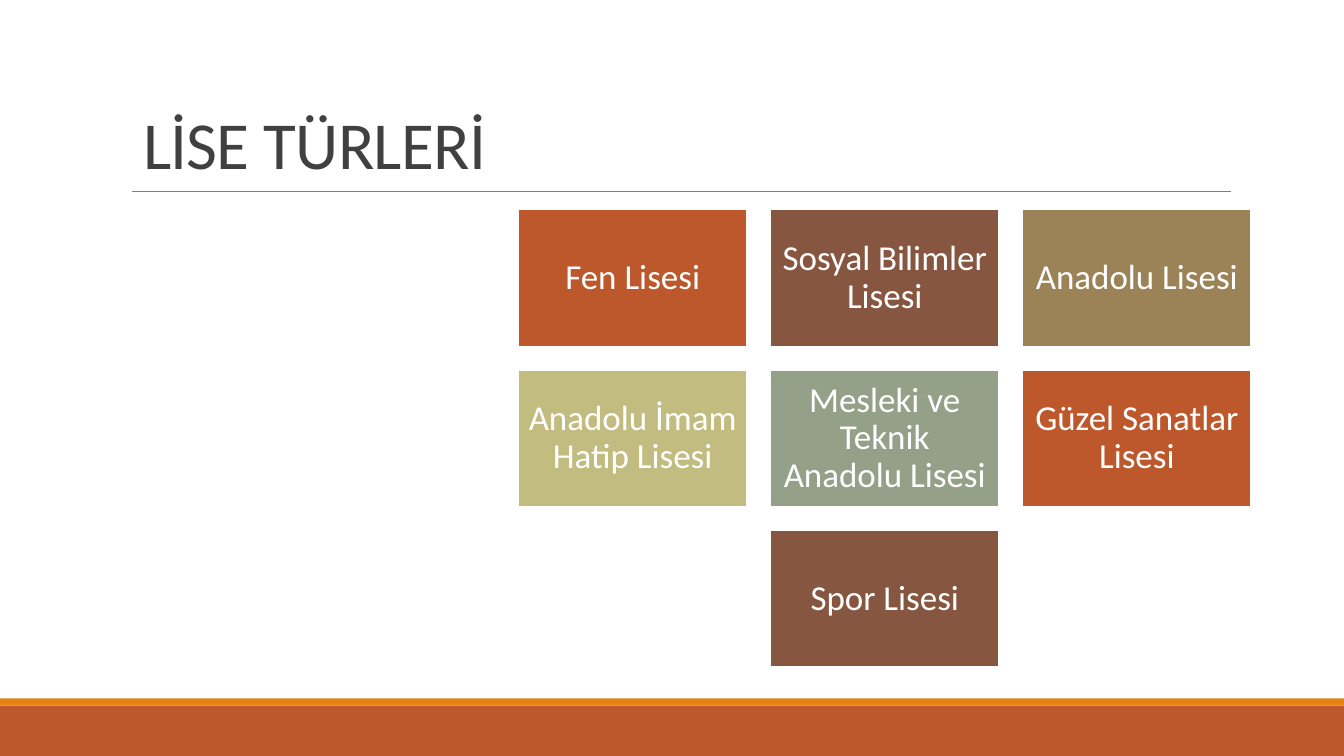
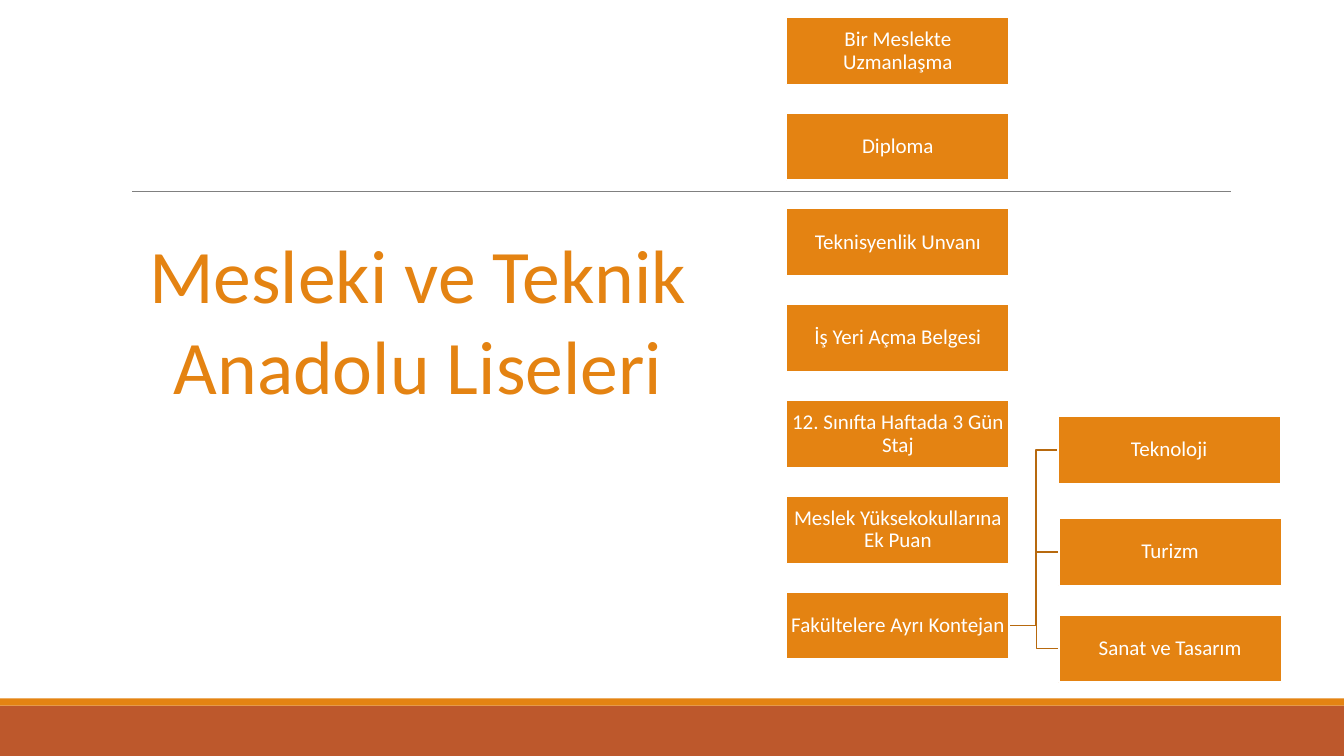
import pptx
import pptx.util
import pptx.dml.color
import pptx.enum.shapes
import pptx.enum.text
import lxml.etree

WIDTH, HEIGHT = 13.33, 7.5
FONT = "Calibri"
RUST, ORANGE, WHITE = "BD582C", "E48312", "FFFFFF"
TITLE_GREY, RULE_GREY, BRANCH_BROWN = "404040", "808080", "B7690E"
SCHOOL_COLOURS = [RUST, "865640", "9B8357", "C2BC80", "94A088"]
ANCHOR = pptx.enum.text.MSO_ANCHOR
ALIGN = pptx.enum.text.PP_ALIGN

SCHOOLS_TITLE = "LİSE TÜRLERİ"
SCHOOLS = [
    "Fen Lisesi", "Sosyal Bilimler Lisesi", "Anadolu Lisesi",
    "Anadolu İmam Hatip Lisesi", "Mesleki ve Teknik Anadolu Lisesi",
    "Güzel Sanatlar Lisesi", "Spor Lisesi",
]
SCHOOL_GRID = dict(left=5.14, top=2.08, columns=3, pitch_x=2.5, pitch_y=1.59)
SCHOOL_SIZE = (2.27, 1.36)

VOCATIONAL_TITLE = "Mesleki ve Teknik Anadolu Liseleri"
BENEFITS = [
    "Bir Meslekte Uzmanlaşma", "Diploma", "Teknisyenlik Unvanı",
    "İş Yeri Açma Belgesi", "12. Sınıfta Haftada 3 Gün Staj",
    "Meslek Yüksekokullarına Ek Puan", "Fakültelere Ayrı Kontejan",
]
FACULTIES = [
    ("Teknoloji", 10.49, 4.13),
    ("Turizm", 10.5, 5.14),
    ("Sanat ve Tasarım", 10.5, 6.1),
]
BENEFIT_LEFT, BENEFIT_TOP, BENEFIT_PITCH = 7.8, 0.17, 0.95
BENEFIT_SIZE = (2.21, 0.67)
ELBOW_SHARE = 0.55


def inches(*values):
    return [pptx.util.Inches(value) for value in values]


def colour(code):
    return pptx.dml.color.RGBColor.from_string(code)


def write(frame, text, size, ink=WHITE, align=ALIGN.CENTER, anchor=ANCHOR.MIDDLE,
          spacing=1.0, inset=None, tracking=0):
    frame.word_wrap = True
    frame.vertical_anchor = anchor
    if inset is not None:
        margin = pptx.util.Inches(inset)
        frame.margin_left = frame.margin_right = margin
        frame.margin_top = frame.margin_bottom = margin
    paragraph = frame.paragraphs[0]
    paragraph.alignment = align
    paragraph.line_spacing = spacing
    run = paragraph.add_run()
    run.text = text
    run.font.name = FONT
    run.font.size = pptx.util.Pt(size)
    run.font.color.rgb = colour(ink)
    if tracking:
        run._r.get_or_add_rPr().set("spc", str(int(tracking * 100)))


def add_box(slide, left, top, width, height, fill, outline=None):
    box = slide.shapes.add_shape(pptx.enum.shapes.MSO_SHAPE.RECTANGLE,
                                 *inches(left, top, width, height))
    box.shadow.inherit = False
    box.fill.solid()
    box.fill.fore_color.rgb = colour(fill)
    if outline:
        box.line.color.rgb = colour(outline)
        box.line.width = pptx.util.Pt(1.25)
    else:
        box.line.fill.background()
    return box


def add_label(slide, text, left, top, extent, fill, size, inset):
    box = add_box(slide, left, top, *extent, fill, outline=WHITE)
    write(box.text_frame, text, size=size, spacing=0.9, inset=inset)


def add_heading(slide, text, left, top, width, height, **style):
    heading = slide.shapes.add_textbox(*inches(left, top, width, height))
    write(heading.text_frame, text, **style)


def add_branch(slide, start, end):
    elbow = start[0] + ELBOW_SHARE * (end[0] - start[0])
    corners = [start, (elbow, start[1]), (elbow, end[1]), end]
    points = [tuple(inches(*corner)) for corner in corners]
    builder = slide.shapes.build_freeform(*points[0], scale=1.0)
    builder.add_line_segments(points[1:], close=False)
    branch = builder.convert_to_shape()
    branch.shadow.inherit = False
    branch.fill.background()
    branch.line.color.rgb = colour(BRANCH_BROWN)
    branch.line.width = pptx.util.Pt(1.25)


def new_slide(deck):
    slide = deck.slides.add_slide(deck.slide_layouts[6])
    add_box(slide, 0, 7, WIDTH, 0.5, RUST)
    add_box(slide, 0, 6.93, WIDTH, 0.07, ORANGE)
    rule = slide.shapes.add_connector(pptx.enum.shapes.MSO_CONNECTOR.STRAIGHT,
                                      *inches(1.31, 1.9, 12.21, 1.9))
    rule.line.color.rgb = colour(RULE_GREY)
    rule.line.width = pptx.util.Pt(0.5)
    lxml.etree.SubElement(rule._element.spPr, pptx.oxml.ns.qn("a:effectLst"))
    return slide


def build_schools(deck):
    slide = new_slide(deck)
    add_heading(slide, SCHOOLS_TITLE, 1.32, 0.42, 3.82, 1.45, size=48, ink=TITLE_GREY,
                align=ALIGN.LEFT, anchor=ANCHOR.BOTTOM, spacing=0.85, tracking=-0.5)
    columns = SCHOOL_GRID["columns"]
    for index, school in enumerate(SCHOOLS):
        row, column = divmod(index, columns)
        in_row = min(columns, len(SCHOOLS) - row * columns)
        column += (columns - in_row) / 2
        add_label(slide, school,
                  SCHOOL_GRID["left"] + column * SCHOOL_GRID["pitch_x"],
                  SCHOOL_GRID["top"] + row * SCHOOL_GRID["pitch_y"],
                  SCHOOL_SIZE, SCHOOL_COLOURS[index % len(SCHOOL_COLOURS)],
                  size=25, inset=0.1)


def build_vocational(deck):
    slide = new_slide(deck)
    benefits = [(benefit, BENEFIT_LEFT, BENEFIT_TOP + row * BENEFIT_PITCH)
                for row, benefit in enumerate(BENEFITS)]
    width, height = BENEFIT_SIZE
    quota_top = benefits[-1][2]
    start = (BENEFIT_LEFT + width, quota_top + height / 2)
    for _, left, top in reversed(FACULTIES):
        add_branch(slide, start, (left, top + height / 2))
    for text, left, top in benefits + FACULTIES:
        add_label(slide, text, left, top, BENEFIT_SIZE, ORANGE, size=15, inset=0.01)
    add_heading(slide, VOCATIONAL_TITLE, 0.7, 2.21, 6.89, 1.92, size=54, ink=ORANGE,
                anchor=ANCHOR.TOP)


def main():
    deck = pptx.Presentation()
    deck.slide_width, deck.slide_height = inches(WIDTH, HEIGHT)
    build_schools(deck)
    build_vocational(deck)
    deck.save("out.pptx")


if __name__ == "__main__":
    main()
